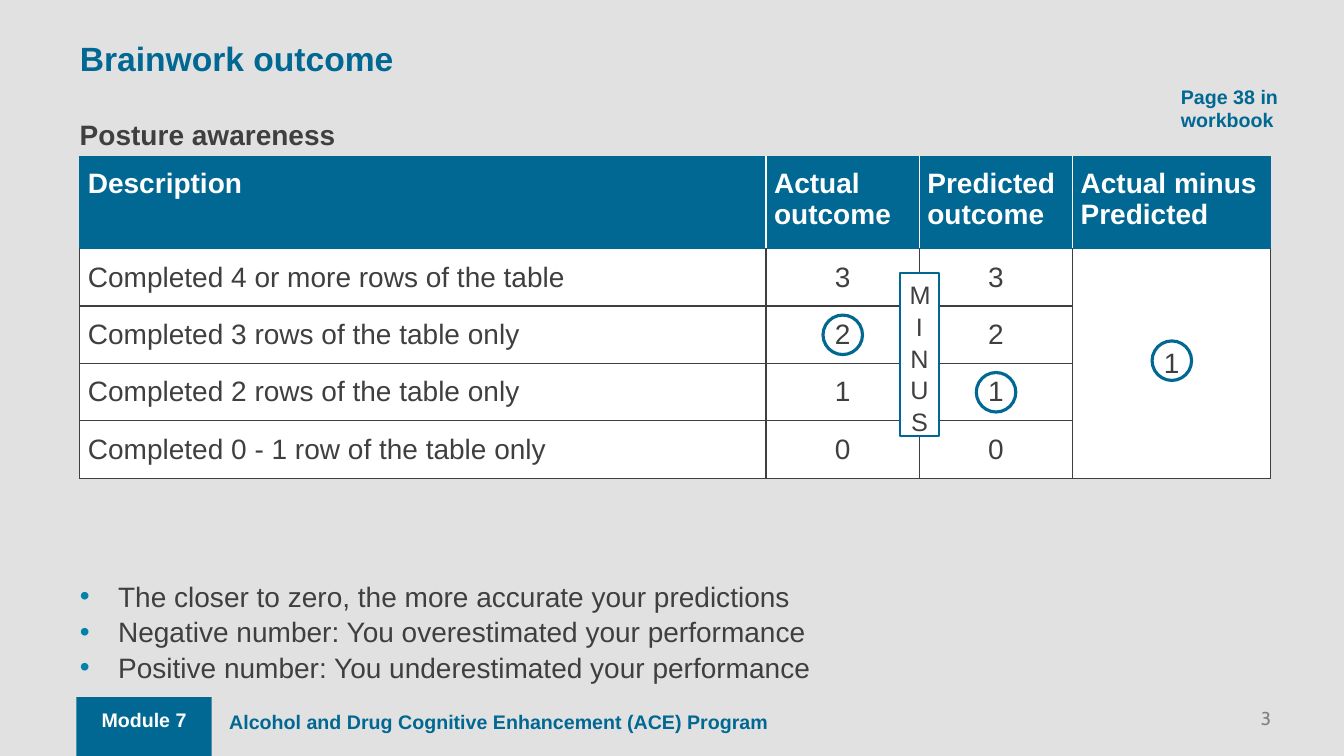
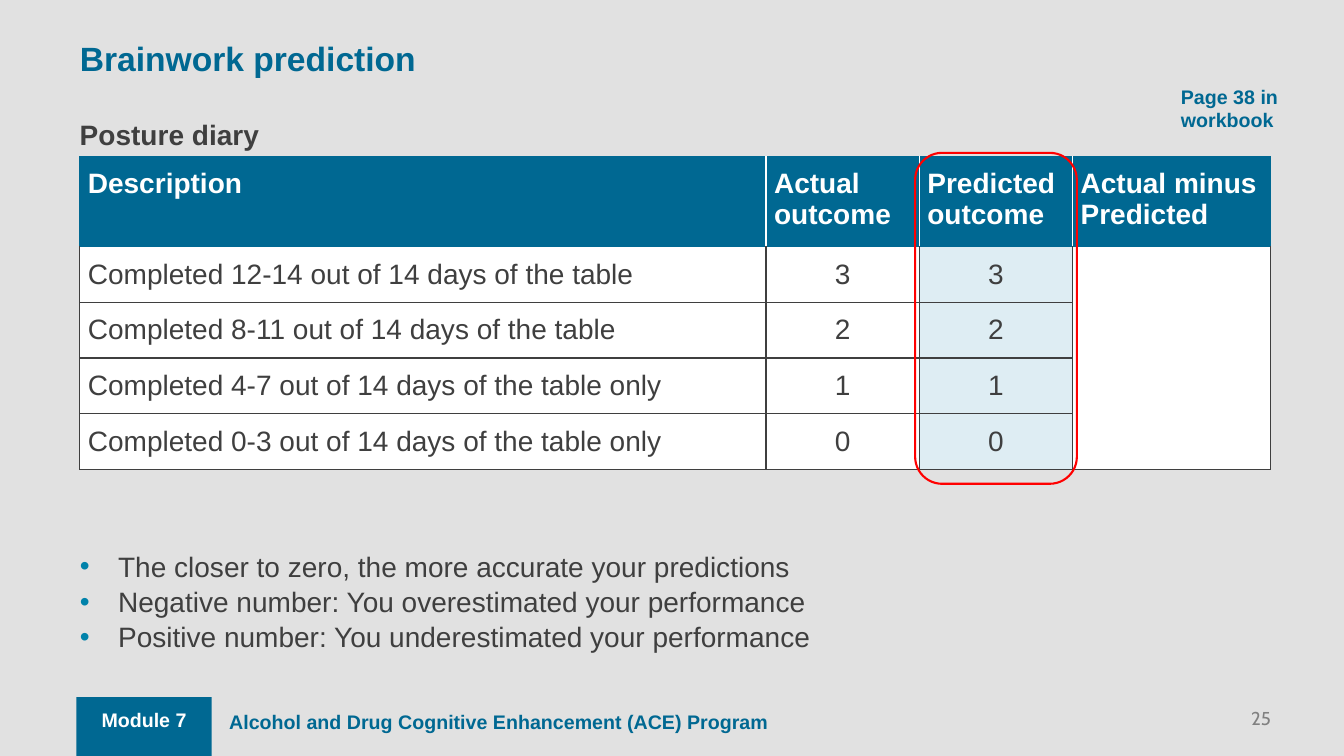
import pptx
import pptx.util
import pptx.dml.color
import pptx.enum.shapes
import pptx.enum.text
import pptx.oxml

SHAPE = pptx.enum.shapes.MSO_SHAPE
ALIGN = pptx.enum.text.PP_ALIGN
ANCHOR = pptx.enum.text.MSO_ANCHOR
NAMESPACE = 'xmlns:a="http://schemas.openxmlformats.org/drawingml/2006/main"'

BLUE, BULLET, INK, GREY = "006892", "0082AA", "3F3F3F", "808080"
WHITE, PAPER, TINT, RED = "FFFFFF", "E1E1E1", "DEEDF3", "FF0000"

COLUMNS, ROWS = 160, 90
LEFT = 9.5
TABLE_TOP = 18.7
TABLE_COLUMNS = [81.7, 18.25, 18.25, 23.6]
RIGHT = LEFT + sum(TABLE_COLUMNS)
CIRCLE = 4.7
HEADINGS = ["Description", "Actual outcome", "Predicted outcome", "Actual minus Predicted"]
SCORES = ["3", "2", "1", "0"]
RULES = [
    "The closer to zero, the more accurate your predictions",
    "Negative number: You overestimated your performance",
    "Positive number: You underestimated your performance",
]


def color(code):
    return pptx.dml.color.RGBColor.from_string(code)


class Workbook:
    """Draws the module's pages on a grid of 160 columns by 90 rows."""

    def __init__(self):
        self.deck = pptx.Presentation()
        self.deck.slide_width = pptx.util.Inches(13.33)
        self.deck.slide_height = pptx.util.Inches(7.5)
        self.page = None

    def place(self, left, top, width, height):
        across = self.deck.slide_width / COLUMNS
        down = self.deck.slide_height / ROWS
        return [round(left * across), round(top * down), round(width * across), round(height * down)]

    def new_page(self, title, subtitle, number):
        self.page = self.deck.slides.add_slide(self.deck.slide_layouts[6])
        fill = self.page.background.fill
        fill.solid()
        fill.fore_color.rgb = color(PAPER)
        band = self.shape(SHAPE.RECTANGLE, 9.1, 83, 16.1, 7, fill=BLUE)
        self.fill_text(band.text_frame, "Module 7", 14, WHITE, bold=True,
                       align=ALIGN.CENTER, insets=(0.1, 0.11, 0.1, 0.05))
        self.text("Alcohol and Drug Cognitive Enhancement (ACE) Program",
                  26.1, 83.9, 133.7, 5.6, 14, BLUE, bold=True)
        self.text(str(number), RIGHT - 24, 84.1, 24, 2.4, 13.3, GREY, font="Cabin",
                  align=ALIGN.RIGHT, insets=(0, 0, 0, 0))
        self.text(title, LEFT, 4.1, 107, 5.6, 24, BLUE, bold=True,
                  anchor=ANCHOR.MIDDLE, insets=(0, 0, 0, 0))
        self.text(subtitle, LEFT, 13.4, 53, 5.3, 20, INK, bold=True, insets=(0, 0.05, 0.1, 0.05))
        self.text("Page 38 in workbook", 139.4, 9.5, 16.6, 6.8, 14, BLUE, bold=True)

    def fill_text(self, frame, text, size, ink, bold=False, font="Arial", align=ALIGN.LEFT,
                  anchor=ANCHOR.TOP, insets=(0.1, 0.05, 0.1, 0.05), spacing=None):
        frame.text = text
        frame.word_wrap = True
        frame.vertical_anchor = anchor
        left, top, right, bottom = map(pptx.util.Inches, insets)
        frame.margin_left, frame.margin_right = left, right
        frame.margin_top, frame.margin_bottom = top, bottom
        self.style(frame, size, ink, bold, font, align, spacing)

    def style(self, frame, size, ink, bold, font="Arial", align=ALIGN.LEFT, spacing=None):
        for para in frame.paragraphs:
            para.alignment = align
            para.line_spacing = spacing
            for span in para.runs:
                span.font.size = pptx.util.Pt(size)
                span.font.name = font
                span.font.bold = bold
                span.font.color.rgb = color(ink)

    def text(self, text, left, top, width, height, size, ink, **options):
        box = self.page.shapes.add_textbox(*self.place(left, top, width, height))
        self.fill_text(box.text_frame, text, size, ink, **options)
        return box

    def shape(self, kind, left, top, width, height, fill=None, line=None, weight=1.5):
        shape = self.page.shapes.add_shape(kind, *self.place(left, top, width, height))
        shape.shadow.inherit = False
        if fill:
            shape.fill.solid()
            shape.fill.fore_color.rgb = color(fill)
        else:
            shape.fill.background()
        if line:
            shape.line.color.rgb = color(line)
            shape.line.width = pptx.util.Pt(weight)
        else:
            shape.line.fill.background()
        return shape

    def circle(self, x, y):
        self.shape(SHAPE.OVAL, x - CIRCLE / 2, y - CIRCLE / 2, CIRCLE, CIRCLE, line=BLUE, weight=2.25)

    def bullets(self, items, top):
        box = self.text("\n".join(items), LEFT, top, RIGHT - LEFT, 13.5, 20, INK,
                        insets=(0, 0, 0, 0), spacing=1.05)
        indent = pptx.util.Inches(0.38)
        for para in box.text_frame.paragraphs:
            properties = para._p.get_or_add_pPr()
            properties.set("marL", str(indent))
            properties.set("indent", str(-indent))
            for mark in (f'<a:buClr {NAMESPACE}><a:srgbClr val="{BULLET}"/></a:buClr>',
                         f'<a:buFont {NAMESPACE} typeface="Arial"/>',
                         f'<a:buChar {NAMESPACE} char="•"/>'):
                properties.append(pptx.oxml.parse_xml(mark))

    def borders(self, cell, left, right, top, bottom):
        properties = cell._tc.get_or_add_tcPr()
        for side, ink in zip("LRTB", (left, right, top, bottom)):
            properties.append(pptx.oxml.parse_xml(
                f'<a:ln{side} {NAMESPACE} w="12700"><a:solidFill><a:srgbClr val="{ink}"/>'
                f'</a:solidFill></a:ln{side}>'))

    def table(self, descriptions, difference, heights, predicted_fill):
        records = [HEADINGS]
        records += [[name, score, score, ""] for name, score in zip(descriptions, SCORES)]
        records[1][-1] = difference
        last = len(HEADINGS) - 1
        frame = self.page.shapes.add_table(
            len(records), len(HEADINGS), *self.place(LEFT, TABLE_TOP, RIGHT - LEFT, sum(heights)))
        table = frame.table
        table.first_row = table.horz_banding = False
        for column, width in zip(table.columns, TABLE_COLUMNS):
            column.width = self.place(0, 0, width, 0)[2]
        for row, height in zip(table.rows, heights):
            row.height = self.place(0, 0, 0, height)[3]
        for i, record in enumerate(records):
            for j, value in enumerate(record):
                cell = table.cell(i, j)
                cell.text = value
                cell.margin_left = cell.margin_right = pptx.util.Inches(0.08)
                cell.margin_top = cell.margin_bottom = pptx.util.Inches(0.11)
                if i == 0:
                    fill = BLUE
                    self.style(cell.text_frame, 20, WHITE, True)
                    self.borders(cell, WHITE if j else BLUE, WHITE if j < last else BLUE, BLUE, BLUE)
                else:
                    fill = predicted_fill if j == 2 else WHITE
                    cell.vertical_anchor = ANCHOR.MIDDLE
                    self.style(cell.text_frame, 20, INK, False, align=ALIGN.CENTER if j else ALIGN.LEFT)
                    self.borders(cell, INK, INK, BLUE if i == 1 else INK, INK)
                cell.fill.solid()
                cell.fill.fore_color.rgb = color(fill)
        table.cell(1, last).merge(table.cell(len(records) - 1, last))


def column_left(index):
    return LEFT + sum(TABLE_COLUMNS[:index])


def column_middle(index):
    return column_left(index) + TABLE_COLUMNS[index] / 2


def outcome_page(book):
    book.new_page("Brainwork outcome", "Posture awareness", 3)
    header, row = 10.9, 6.84
    book.table(["Completed 4 or more rows of the table",
                "Completed 3 rows of the table only",
                "Completed 2 rows of the table only",
                "Completed 0 - 1 row of the table only"], "1", [header] + [row] * 4, WHITE)
    body_top = TABLE_TOP + header
    for column, rows_down in ((1, 1.5), (2, 2.5), (3, 1.95)):
        book.circle(column_middle(column), body_top + rows_down * row)
    minus = book.shape(SHAPE.RECTANGLE, column_left(2) - CIRCLE / 2, 32.5, CIRCLE, 19.4,
                       fill=WHITE, line=BLUE)
    book.fill_text(minus.text_frame, "MINUS", 18, INK, align=ALIGN.CENTER, spacing=1.05)
    book.bullets(RULES, 68.8)


def prediction_page(book):
    book.new_page("Brainwork prediction", "Posture diary", 25)
    heights = [10.4] + [6.55] * 4
    book.table(["Completed 12-14 out of 14 days of the table",
                "Completed 8-11 out of 14 days of the table",
                "Completed 4-7 out of 14 days of the table only",
                "Completed 0-3 out of 14 days of the table only"], "", heights, TINT)
    margin = 0.5
    book.shape(SHAPE.ROUNDED_RECTANGLE, column_left(2) - margin, TABLE_TOP - margin,
               TABLE_COLUMNS[2] + 2 * margin, sum(heights) + 2.8, line=RED)
    book.bullets(RULES, 65.2)


def main():
    book = Workbook()
    outcome_page(book)
    prediction_page(book)
    book.deck.save("out.pptx")


if __name__ == "__main__":
    main()
